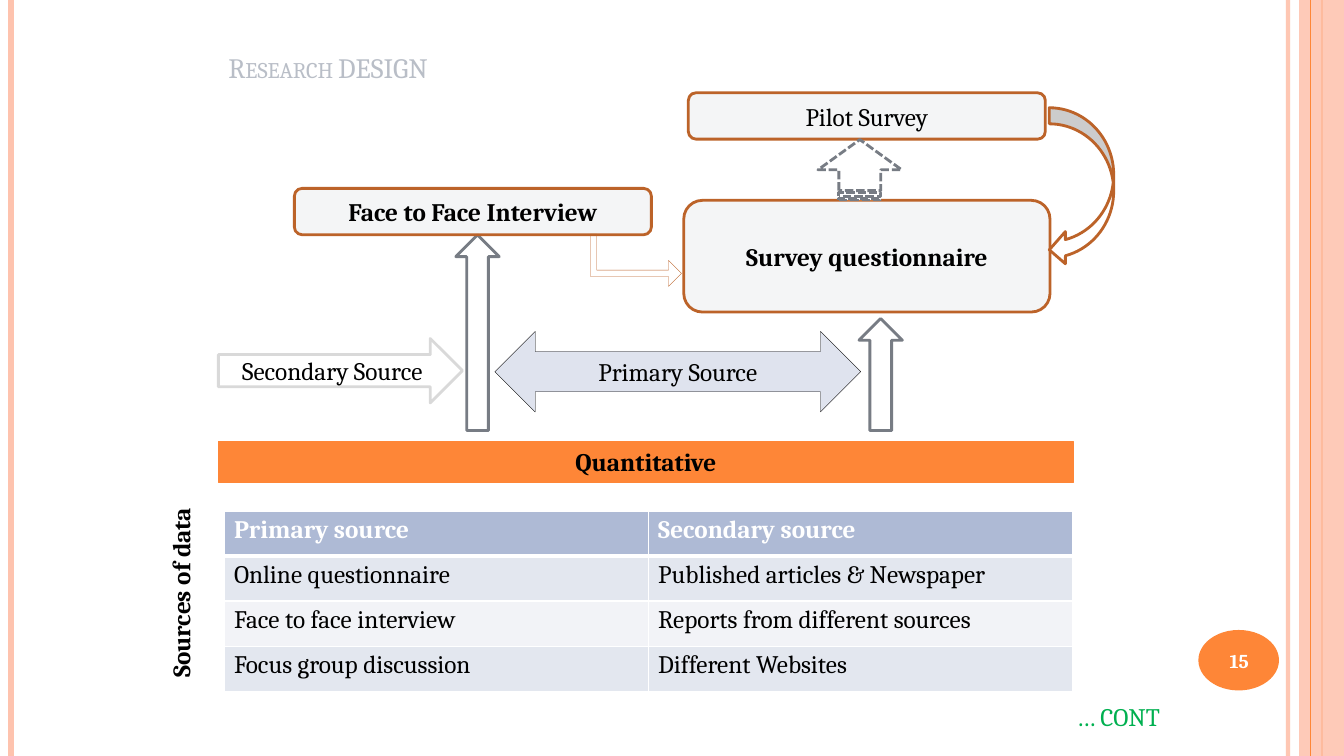
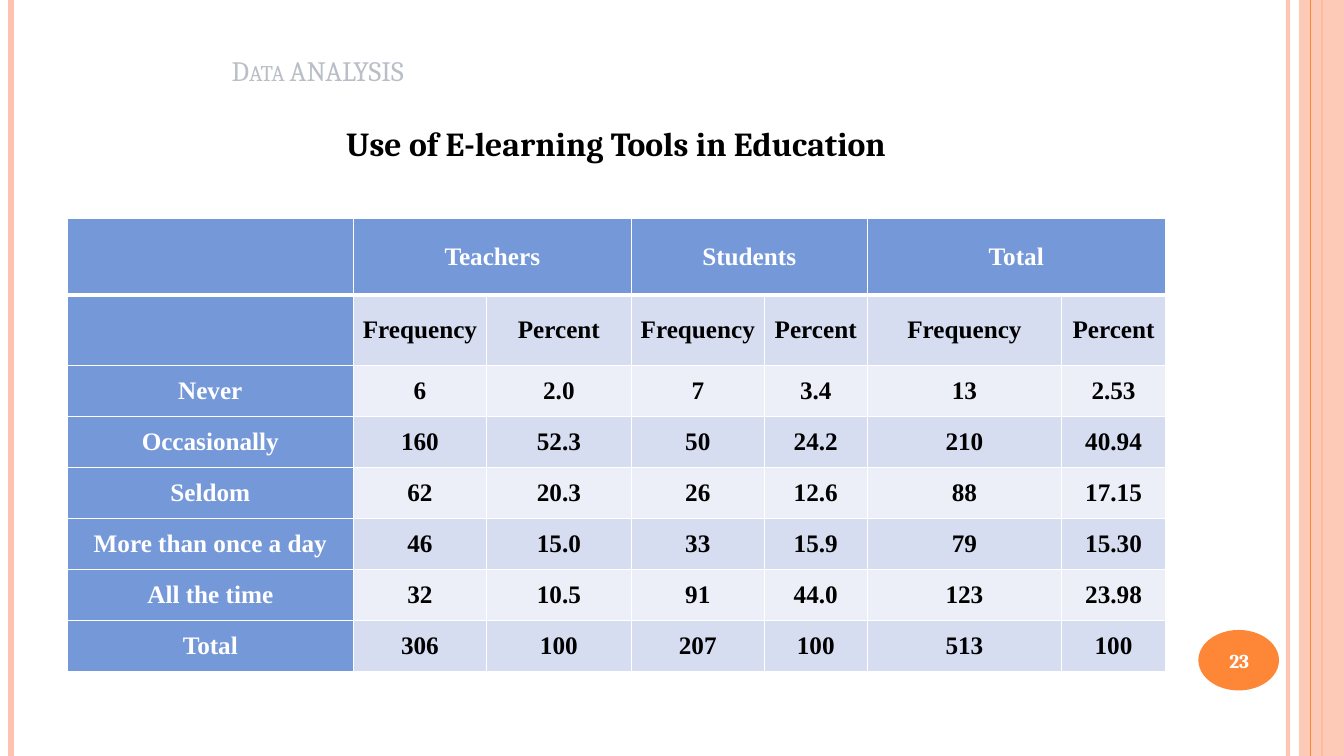
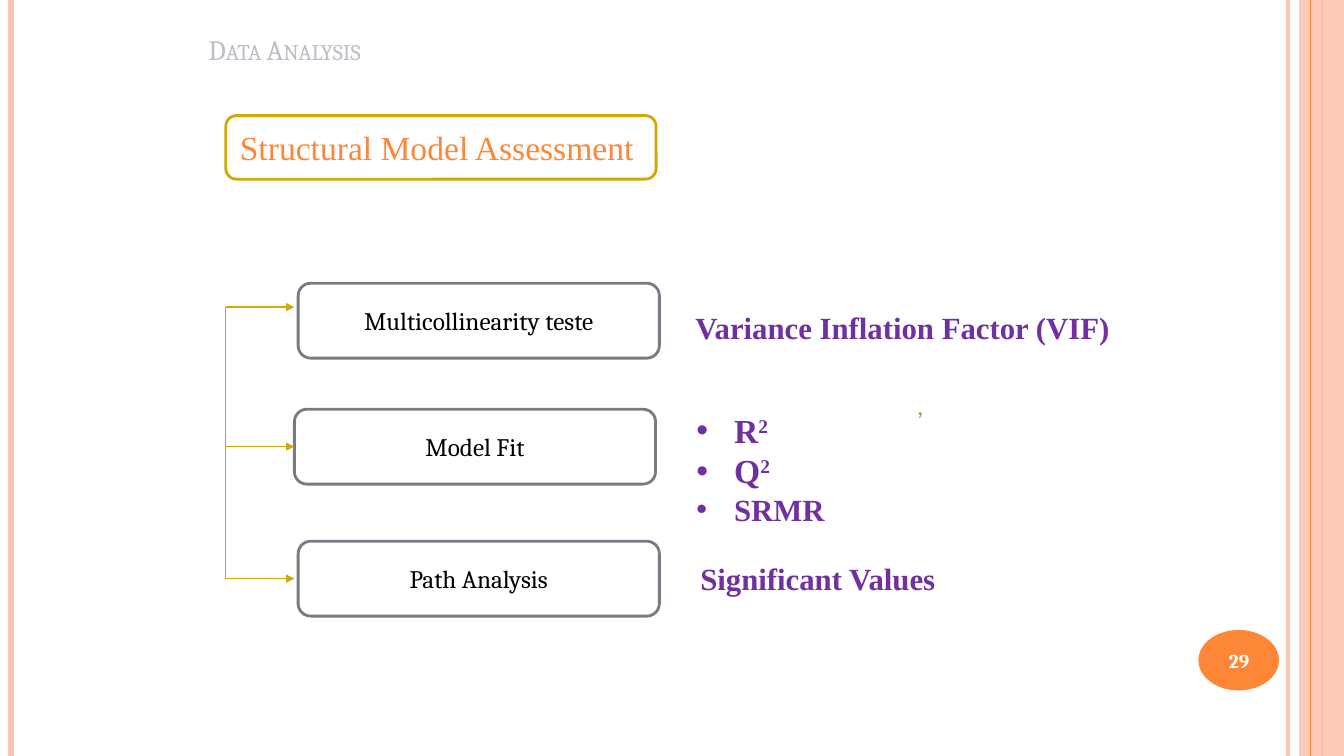
from pptx import Presentation
from pptx.dml.color import RGBColor
from pptx.enum.dml import MSO_LINE
from pptx.enum.shapes import MSO_CONNECTOR, MSO_SHAPE
from pptx.enum.text import MSO_ANCHOR, PP_ALIGN
from pptx.oxml.ns import qn
from pptx.oxml.xmlchemy import OxmlElement
from pptx.util import Pt

STRAIGHT = MSO_CONNECTOR.STRAIGHT
RECTANGLE, ROUNDED, OVAL = MSO_SHAPE.RECTANGLE, MSO_SHAPE.ROUNDED_RECTANGLE, MSO_SHAPE.OVAL
DOWN_ARROW, RIGHT_ARROW = MSO_SHAPE.DOWN_ARROW, MSO_SHAPE.RIGHT_ARROW
TWO_WAY_ARROW, BENT_ARROW = MSO_SHAPE.LEFT_RIGHT_ARROW, MSO_SHAPE.BENT_UP_ARROW
CURVED_ARROW, STRIPED_ARROW = MSO_SHAPE.CURVED_LEFT_ARROW, MSO_SHAPE.STRIPED_RIGHT_ARROW
LEFT, CENTER = PP_ALIGN.LEFT, PP_ALIGN.CENTER
TOP, MIDDLE, BOTTOM = MSO_ANCHOR.TOP, MSO_ANCHOR.MIDDLE, MSO_ANCHOR.BOTTOM
SHORT_DASH = MSO_LINE.SQUARE_DOT

WIDTH, HEIGHT = 960, 540
SERIF, TIMES = "Cambria", "Times New Roman"
BLACK, WHITE = "000000", "FFFFFF"
ORANGE, PEACH, BROWN = "FE8637", "FEC3AE", "BC6329"
GRAY, PALE, TITLE_GRAY = "777C84", "DCDFE3", "B9BEC7"
GOLD, PURPLE, GREEN = "D0A80A", "7030A0", "00B050"


def rgb(value):
    """Turn a hex string into a colour."""
    return RGBColor.from_string(value)


def add_element(parent, tag, **attributes):
    """Append an XML element with attributes."""
    element = OxmlElement(tag)
    for name, value in attributes.items():
        element.set(name, str(value))
    parent.append(element)
    return element


def set_opacity(properties, percent):
    """Set the opacity of the first colour below the element."""
    color = next(properties.iter(qn("a:srgbClr")))
    add_element(color, "a:alpha", val=percent * 1000)


class Deck:
    """Holds the style and the current slide."""

    def __init__(self):
        """Start an empty presentation."""
        self.presentation = Presentation()
        self.presentation.slide_width = Pt(WIDTH)
        self.presentation.slide_height = Pt(HEIGHT)
        self.slide = None

    def add_slide(self, number, title, title_box):
        """Add a slide with side bands, number badge and title."""
        self.slide = self.presentation.slides.add_slide(self.presentation.slide_layouts[6])
        self.line(920, 0, 920, HEIGHT, PEACH, 3, opacity=93)
        self.line(8, 0, 8, HEIGHT, PEACH, 4.5)
        self.line(944, 0, 944, HEIGHT, ORANGE, 1.5)
        self.shape(RECTANGLE, (928, 0, 32, HEIGHT), PEACH, opacity=87)
        self.line(936, 0, 936, HEIGHT, ORANGE, 0.75)
        self.shape(OVAL, (856, 450, 57.6, 43.2), ORANGE)
        self.text((853.2, 451.4, 64, 41), number, size=14, color=WHITE, bold=True,
                  align=CENTER, anchor=MIDDLE)
        heading = self.text(title_box, title, size=20, color=TITLE_GRAY, anchor=BOTTOM)
        for run in heading.text_frame.paragraphs[0].runs:
            run.font._element.set("cap", "small")

    def format_runs(self, paragraph, size=18, color=BLACK, bold=False, font=SERIF):
        """Format all runs of a paragraph."""
        for run in paragraph.runs:
            run.font.size = Pt(size)
            run.font.bold = bold
            run.font.name = font
            run.font.color.rgb = rgb(color)

    def fill_frame(self, frame, text, align=LEFT, anchor=TOP, **style):
        """Fill a text frame with formatted text."""
        frame.text = text
        frame.word_wrap = True
        frame.vertical_anchor = anchor
        for paragraph in frame.paragraphs:
            paragraph.alignment = align
            self.format_runs(paragraph, **style)

    def text(self, box, text, rotation=0, **style):
        """Add a text box."""
        shape = self.slide.shapes.add_textbox(*map(Pt, box))
        shape.rotation = rotation
        self.fill_frame(shape.text_frame, text, **style)
        return shape

    def shape(self, kind, box, fill=None, line=None, width=2, text=None, rotation=0,
              opacity=None, dash=None, adjustments=(), **style):
        """Add a preset shape, with centred text if given."""
        shape = self.slide.shapes.add_shape(kind, *map(Pt, box))
        shape.shadow.inherit = False
        shape.rotation = rotation
        for index, value in enumerate(adjustments):
            shape.adjustments[index] = value
        if fill:
            shape.fill.solid()
            shape.fill.fore_color.rgb = rgb(fill)
        else:
            shape.fill.background()
        if opacity:
            set_opacity(shape._element.spPr, opacity)
        if line:
            shape.line.color.rgb = rgb(line)
            shape.line.width = Pt(width)
        else:
            shape.line.fill.background()
        if dash:
            shape.line.dash_style = dash
        if text:
            self.fill_frame(shape.text_frame, text, align=CENTER, anchor=MIDDLE, **style)

    def line(self, x1, y1, x2, y2, color, width, arrow=False, opacity=None):
        """Add a straight line, optionally with an arrowhead at its end."""
        connector = self.slide.shapes.add_connector(STRAIGHT, *map(Pt, (x1, y1, x2, y2)))
        connector.line.color.rgb = rgb(color)
        connector.line.width = Pt(width)
        properties = connector._element.spPr
        if opacity:
            set_opacity(properties, opacity)
        if arrow:
            add_element(properties.find(qn("a:ln")), "a:tailEnd", type="triangle")
        add_element(properties, "a:effectLst")

    def bullets(self, box, items, indent, **style):
        """Add a bulleted list of (text, superscript, size) items."""
        frame = self.text(box, "\n".join(item[0] for item in items)).text_frame
        for paragraph, (_, superscript, size) in zip(frame.paragraphs, items):
            if superscript:
                run = paragraph.add_run()
                run.text = superscript
                run.font._element.set("baseline", "30000")
            self.format_runs(paragraph, size=size, **style)
            properties = paragraph._p.get_or_add_pPr()
            properties.set("marL", str(Pt(indent)))
            properties.set("indent", str(-Pt(indent)))
            add_element(properties, "a:buFont", typeface="Arial")
            add_element(properties, "a:buChar", char="•")

    def table(self, left, top, columns, heights, rows, cell_style):
        """Add a table; cell_style gives fill and text style by row and column."""
        table = self.slide.shapes.add_table(
            len(rows), len(columns), Pt(left), Pt(top), Pt(sum(columns)), Pt(sum(heights))).table
        for column, width in zip(table.columns, columns):
            column.width = Pt(width)
        for row_index, (row, height) in enumerate(zip(rows, heights)):
            table.rows[row_index].height = Pt(height)
            for column_index, text in enumerate(row):
                cell = table.cell(row_index, column_index)
                fill, style = cell_style(row_index, column_index)
                self.borders(cell, row_index)
                cell.fill.solid()
                cell.fill.fore_color.rgb = rgb(fill)
                if text:
                    self.fill_cell(cell, text, **style)
        return table

    def fill_cell(self, cell, text, margins=None, anchor=TOP, **style):
        """Put formatted text into a table cell."""
        self.fill_frame(cell.text_frame, text, **style)
        cell.vertical_anchor = anchor
        if margins:
            cell.margin_left = cell.margin_right = Pt(margins[0])
            cell.margin_top = cell.margin_bottom = Pt(margins[1])

    def borders(self, cell, row_index):
        """Draw white cell borders, thicker around the header's lower edge."""
        properties = cell._tc.get_or_add_tcPr()
        thick = {("a:lnB", 0), ("a:lnT", 1)}
        for tag in ("a:lnL", "a:lnR", "a:lnT", "a:lnB"):
            width = 3 if (tag, row_index) in thick else 1
            border = add_element(properties, tag, w=Pt(width))
            add_element(add_element(border, "a:solidFill"), "a:srgbClr", val=WHITE)


def source_style(row, column):
    """Style the cells of the sources table."""
    if row == 0:
        return "AEBAD5", {"color": WHITE, "bold": True}
    return ("E3E7EF" if row % 2 else "F2F3F7"), {}


def usage_style(row, column):
    """Style the cells of the usage table."""
    heading = row == 0 or column == 0
    style = {"font": TIMES, "bold": True, "align": CENTER, "anchor": MIDDLE,
             "margins": (5, 0), "color": WHITE if heading else BLACK}
    if heading:
        return "7598D9", style
    return ("D6DDF1" if row % 2 else "ECEFF8"), style


def research_design(deck):
    """Build the research design slide."""
    deck.add_slide("15", "Research DESIGN", (156, 34, 216, 30))
    deck.table(160, 365, [303, 303], [32.2] * 4, [
        ("Primary source", "Secondary source"),
        ("Online questionnaire", "Published articles & Newspaper"),
        ("Face to face interview", "Reports from different sources"),
        ("Focus group discussion", "Different Websites"),
    ], source_style)
    deck.text((762, 497.5, 92, 29), "… CONT", color=GREEN)
    deck.shape(RECTANGLE, (156, 315.4, 610.6, 29), ORANGE, ORANGE, 0.75, "Quantitative", bold=True)
    method = {"fill": PALE, "line": BROWN, "opacity": 30}
    grow = {"fill": WHITE, "line": GRAY, "rotation": 180}
    deck.shape(DOWN_ARROW, (613.6, 227.5, 31, 80), **grow)
    deck.shape(ROUNDED, (491.7, 66.3, 255, 33.1), text="Pilot Survey", **method)
    deck.shape(DOWN_ARROW, (325.6, 167.8, 31, 139.7), **grow)
    deck.shape(ROUNDED, (488.4, 143.1, 261.6, 79.8), text="Survey questionnaire",
               bold=True, **method)
    deck.shape(BENT_ARROW, (435.6, 153.4, 37.4, 65), line=BROWN, width=0.25, rotation=90,
               adjustments=(0.12, 0.25, 0.25))
    deck.shape(TWO_WAY_ARROW, (353.5, 236.7, 261.4, 57.6), "DFE3EE", BLACK, 0.25, "Primary Source")
    deck.shape(RIGHT_ARROW, (156, 241.8, 174.4, 46), WHITE, "D9D9D9", text="Secondary Source")
    deck.shape(ROUNDED, (210.3, 134.6, 255, 33.1), text="Face to Face Interview",
               bold=True, **method)
    deck.text((49, 409, 160, 29), "Sources of data", rotation=270, bold=True, align=CENTER)
    deck.shape(CURVED_ARROW, (749.5, 77, 46, 113), WHITE, BROWN)
    deck.shape(STRIPED_ARROW, (592.6, 91.4, 43.2, 59.8), WHITE, GRAY, rotation=270, dash=SHORT_DASH)


def usage_table(deck):
    """Build the slide with the usage table."""
    deck.add_slide("23", "Data ANALYSIS", (158.4, 36, 216, 30))
    deck.text((48, 84.2, 784, 36), "Use of E-learning Tools in Education",
              size=24, bold=True, align=CENTER)
    table = deck.table(48, 156, [204.5, 95, 103.5, 95, 73.5, 139, 74], [54.7, 50.3] + [36.5] * 6, [
        ("", "Teachers", "", "Students", "", "Total", ""),
        ("",) + ("Frequency", "Percent") * 3,
        ("Never", "6", "2.0", "7", "3.4", "13", "2.53"),
        ("Occasionally", "160", "52.3", "50", "24.2", "210", "40.94"),
        ("Seldom", "62", "20.3", "26", "12.6", "88", "17.15"),
        ("More than once a day", "46", "15.0", "33", "15.9", "79", "15.30"),
        ("All the time", "32", "10.5", "91", "44.0", "123", "23.98"),
        ("Total", "306", "100", "207", "100", "513", "100"),
    ], usage_style)
    for column in (1, 3, 5):
        table.cell(0, column).merge(table.cell(0, column + 1))


def model_assessment(deck):
    """Build the structural model slide."""
    deck.add_slide("29", "Data Analysis", (141.8, 15.1, 166.3, 36))
    steps = (("Multicollinearity teste", 213, 202.3), ("Model Fit", 210.3, 292.3),
             ("Path Analysis", 213, 386.6))
    for text, left, top in steps:
        deck.shape(ROUNDED, (left, top, 258, 53.5), line=GRAY, text=text)
    deck.line(161.3, 219, 161.3, 413.3, GOLD, 1)
    for y in (219.4, 319, 413.3):
        deck.line(161.3, y, 210.3, y, GOLD, 1, arrow=True)
    measure = {"font": TIMES, "color": PURPLE, "bold": True}
    deck.text((489.6, 216.7, 316, 34), "Variance Inflation Factor (VIF)", size=22, **measure)
    deck.shape(ROUNDED, (161.3, 82.6, 307.4, 45.4), WHITE, GOLD,
               text="Structural Model Assessment ", size=24, font=TIMES, color=ORANGE)
    deck.text((493.2, 396, 208, 34), "Significant Values", size=22, **measure)
    deck.bullets((490.3, 289.4, 139.7, 92), [("R", "2", 24), ("Q", "2", 24), ("SRMR", "", 22)],
                 27, **measure)
    deck.text((648, 275, 23, 29), ",", font="Calibri", color="70AD47")


def main():
    """Build and save the presentation."""
    deck = Deck()
    research_design(deck)
    usage_table(deck)
    model_assessment(deck)
    deck.presentation.save("out.pptx")


if __name__ == "__main__":
    main()
